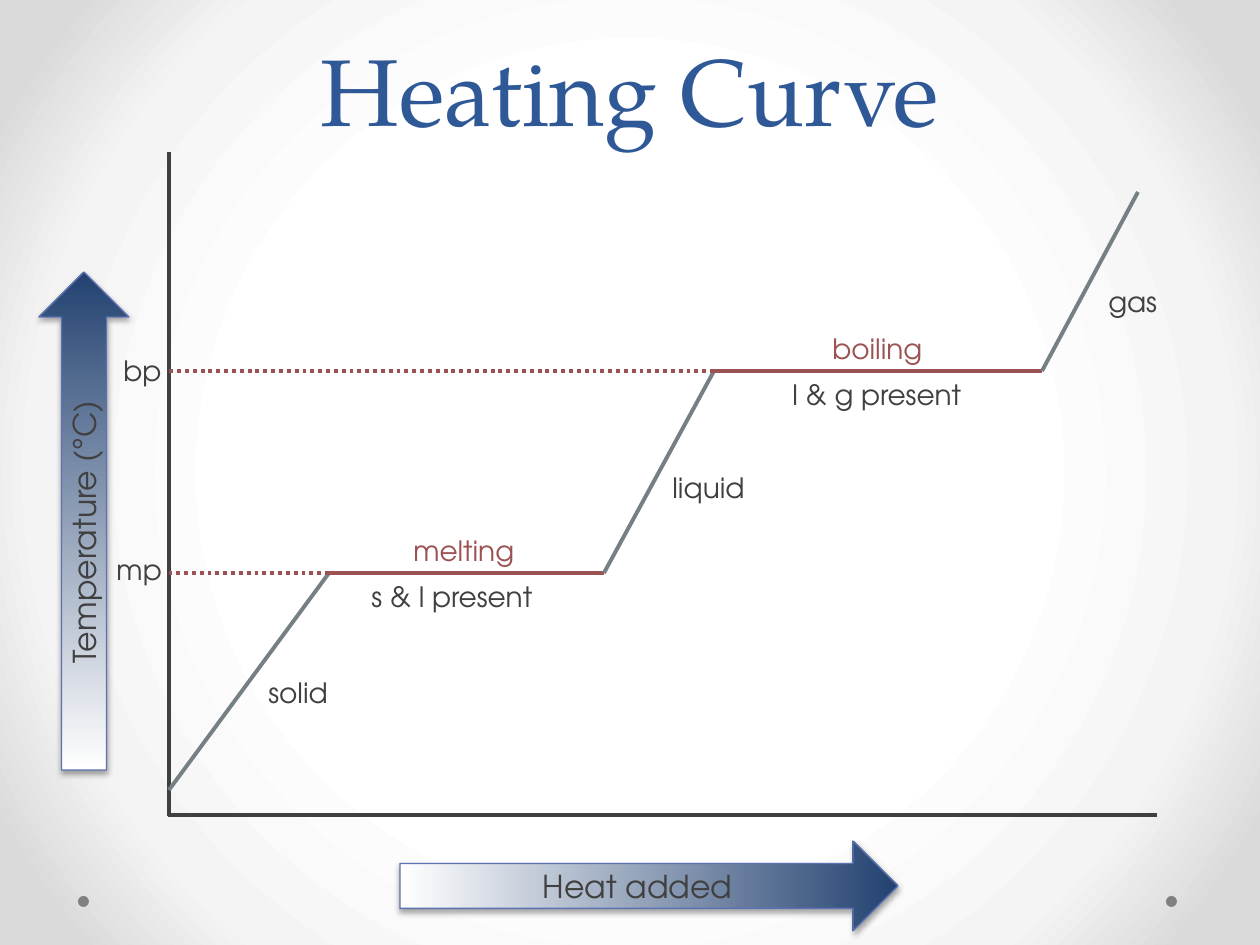
import pptx
import pptx.util
import pptx.dml.color
import pptx.enum.dml
import pptx.enum.shapes
import pptx.enum.text
import pptx.oxml
import pptx.oxml.ns

SCALE = 914400 / 126  # EMU in one px
INK = {
    "text": "404040", "title": "2F5897", "phase": "9C5252", "warm": "758085",
    "dot": "808080", "white": "FFFFFF", "navy": "234271", "edge": "5C72B2",
}
BACK = [(50, "FFFFFF"), (76, "F4F4F4"), (92, "DADADA")]
SANS, SERIF = "TeX Gyre Adventor", "TeX Gyre Pagella"
NS = pptx.oxml.ns.nsdecls("a", "p")
FORM = pptx.enum.shapes.MSO_SHAPE
ALIGN = pptx.enum.text.PP_ALIGN
ANCHOR = pptx.enum.text.MSO_ANCHOR
DOTS = pptx.enum.dml.MSO_LINE.ROUND_DOT


def emu(*px):
    return [pptx.util.Emu(round(v * SCALE)) for v in px]


def rgb(name):
    return pptx.dml.color.RGBColor.from_string(INK[name])


def style(obj, vals):
    for key, val in vals.items():
        setattr(obj, key, val)


class Pen:
    """Holds the text style and the slide being drawn."""

    def __init__(self, slide):
        self.slide = slide
        self.shapes = slide.shapes
        self.font = {"name": SANS, "size": pptx.util.Pt(16)}

    def back(self):
        stops = "".join(
            f'<a:gs pos="{pos * 1000}"><a:srgbClr val="{ink}"/></a:gs>' for pos, ink in BACK)
        self.slide.element.cSld.insert(0, pptx.oxml.parse_xml(
            f'<p:bg {NS}><p:bgPr><a:gradFill rotWithShape="1"><a:gsLst>{stops}</a:gsLst>'
            '<a:path path="circle"><a:fillToRect l="50000" t="50000" r="50000" b="50000"/>'
            '</a:path></a:gradFill><a:effectLst/></p:bgPr></p:bg>'))

    def words(self, frame, text, ink="text", para=None, **font):
        frame.word_wrap = True
        line = frame.paragraphs[0]
        style(line, para or {})
        run = line.add_run()
        run.text = text
        style(run.font, {**self.font, **font})
        run.font.color.rgb = rgb(ink)

    def title(self, text, *box):
        frame = self.shapes.add_textbox(*emu(*box)).text_frame
        frame.vertical_anchor = ANCHOR.BOTTOM
        para = {"alignment": ALIGN.CENTER, "line_spacing": pptx.util.Pt(58)}
        self.words(frame, text, "title", para, name=SERIF, size=pptx.util.Pt(54))

    def label(self, text, x, y, wide, ink="text"):
        frame = self.shapes.add_textbox(*emu(x, y, wide, 47)).text_frame
        self.words(frame, text, ink)

    def dot(self, x, y):
        dot = self.shapes.add_shape(FORM.OVAL, *emu(x, y, 11, 11))
        dot.shadow.inherit = False
        dot.fill.solid()
        dot.fill.fore_color.rgb = rgb("dot")
        dot.line.fill.background()

    def line(self, start, end, ink, dash=None):
        kind = pptx.enum.shapes.MSO_CONNECTOR.STRAIGHT
        line = self.shapes.add_connector(kind, *emu(*start, *end))
        style(line.line, {"width": pptx.util.Pt(2.25), "dash_style": dash})
        line.line.color.rgb = rgb(ink)
        line._element.spPr.append(pptx.oxml.parse_xml(f"<a:effectLst {NS}/>"))

    def arrow(self, text, x, y, turn=0):
        arrow = self.shapes.add_shape(FORM.RIGHT_ARROW, *emu(x, y, 498, 90))
        arrow.rotation = turn
        arrow.fill.gradient()
        arrow.fill.gradient_angle = 0
        for stop, ink in zip(arrow.fill.gradient_stops, ("white", "navy")):
            stop.color.rgb = rgb(ink)
        arrow.line.width = pptx.util.Pt(0.75)
        arrow.line.color.rgb = rgb("edge")
        # Soft shadow just below the arrow
        arrow.shadow.inherit = False
        arrow._element.spPr.find(pptx.oxml.ns.qn("a:effectLst")).append(pptx.oxml.parse_xml(
            f'<a:outerShdw {NS} blurRad="40000" dist="23000" dir="5400000" rotWithShape="0">'
            '<a:srgbClr val="000000"><a:alpha val="35000"/></a:srgbClr></a:outerShdw>'))
        frame = arrow.text_frame
        frame.vertical_anchor = ANCHOR.MIDDLE
        self.words(frame, text, para={"alignment": ALIGN.CENTER}, size=pptx.util.Pt(18))


def main():
    deck = pptx.Presentation()
    deck.slide_width, deck.slide_height = emu(1260, 945)
    pen = Pen(deck.slides.add_slide(deck.slide_layouts[6]))

    # Backdrop and title
    pen.back()
    for x in (1166, 78):
        pen.dot(x, 896)
    pen.title("Heating Curve", 63, 0, 1134, 152)

    # Axes and their arrows
    left, base, melt, boil = 169, 815, 573, 371
    pen.line((left, 152), (left, base + 1), "text")
    pen.line((1157, base), (left - 1, base), "text")
    pen.arrow("Heat added", 400, 841)
    pen.arrow("Temperature (°C)", -165, 476, 270)

    # Curve: warming and phase change take turns
    curve = [(left, 790), (329, melt), (604, melt), (714, boil), (1042, boil), (1138, 192)]
    for i, (start, end) in enumerate(zip(curve, curve[1:])):
        pen.line(start, end, "phase" if i % 2 else "warm")

    # Dotted guides back to the temperature axis
    for x, y in (curve[3], curve[1]):
        pen.line((x, y), (left, y), "phase", DOTS)

    # Labels
    for item in (
        ("s & l present", 359, 573, 207),
        ("l & g present", 780, 371, 207),
        ("solid", 256, 669, 86),
        ("melting", 401, 527, 126, "phase"),
        ("liquid", 660, 464, 110),
        ("boiling", 820, 325, 126, "phase"),
        ("gas", 1096, 278, 86),
        ("mp", 104, 546, 82),
        ("bp", 111, 347, 82),
    ):
        pen.label(*item)

    deck.save("out.pptx")


if __name__ == "__main__":
    main()
